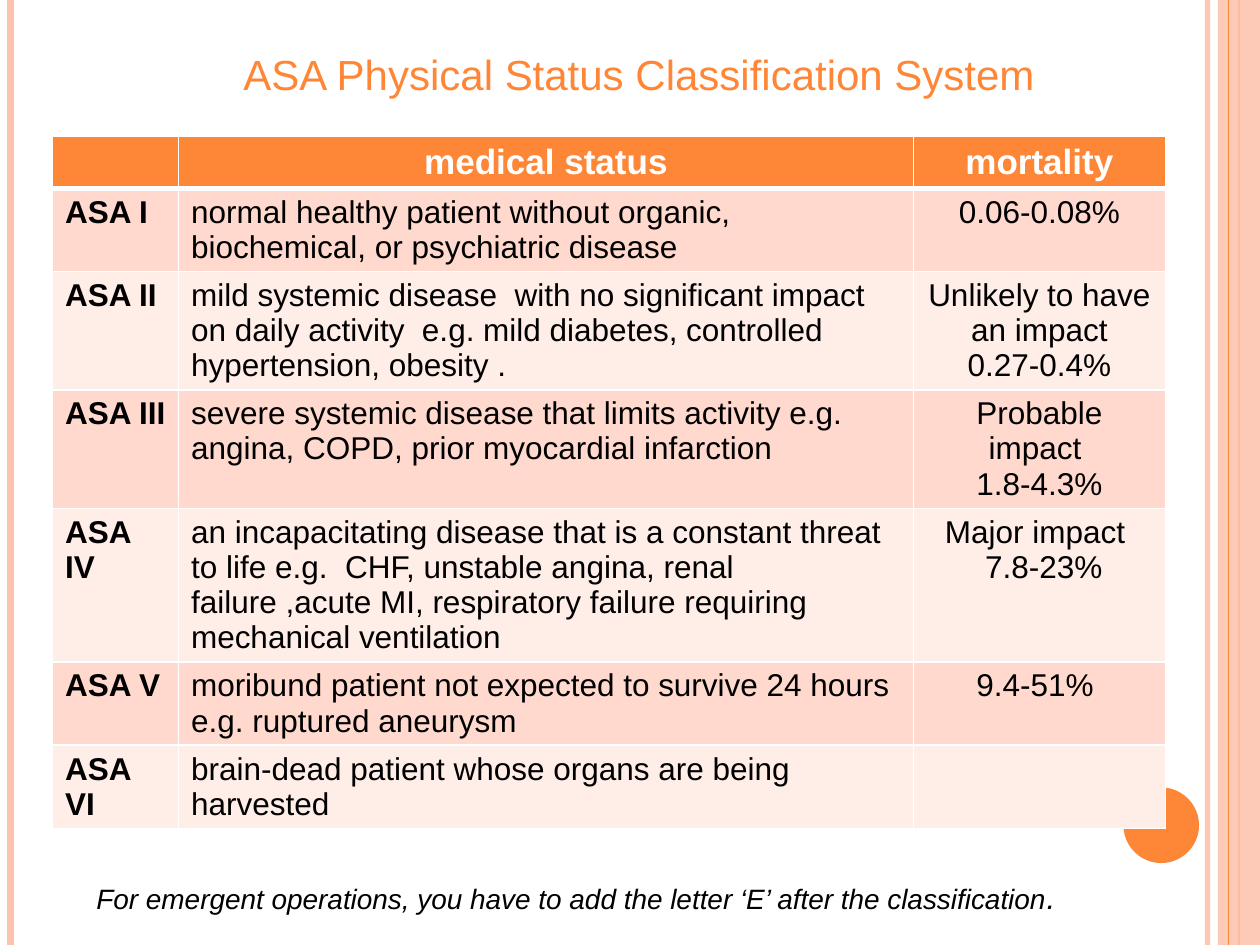
"""Build the slide on the ASA physical status classes."""
from typing import NamedTuple

from lxml.etree import SubElement as Sub
from pptx import Presentation
from pptx.dml.color import RGBColor
from pptx.enum.shapes import MSO_CONNECTOR as Link, MSO_SHAPE as Form
from pptx.enum.text import MSO_AUTO_SIZE as Fit, PP_ALIGN as Align
from pptx.oxml import parse_xml
from pptx.oxml.ns import nsdecls, qn
from pptx.util import Pt

WIDE, HIGH = 720, 540
ORANGE, PEACH, WHITE, BLACK = "FE8637", "FEC3AE", "FFFFFF", "000000"
BANDS = "FFD9CE", "FFEDE8"
COLS = 72, 420, 144
HEAD = "", "medical status", "mortality"


class Stripe(NamedTuple):
    x: float
    width: float
    color: str
    alpha: int = 100


class Grade(NamedTuple):
    name: str
    status: str
    risk: str
    height: float


class Box(NamedTuple):
    left: float
    top: float
    width: float
    height: float


STRIPES = [
    Stripe(690, 3, PEACH, 93),
    Stripe(6, 4.5, PEACH),
    Stripe(708, 1.5, ORANGE),
]
EDGE = Stripe(702, 0.75, ORANGE)
GRADES = [
    Grade("ASA I", "normal healthy patient without organic, biochemical, "
          "or psychiatric disease", "0.06-0.08%", 47.4),
    Grade("ASA II", "mild systemic disease  with no significant impact on daily "
          "activity  e.g. mild diabetes, controlled hypertension, obesity .",
          "Unlikely to have an impact\n0.27-0.4%", 67.6),
    Grade("ASA III", "severe systemic disease that limits activity e.g. angina, "
          "COPD, prior myocardial infarction",
          "Probable impact \n 1.8-4.3% ", 67.6),
    Grade("ASA IV", "an incapacitating disease that is a constant threat to life "
          "e.g.  CHF, unstable angina, renal failure ,acute MI, respiratory "
          "failure requiring mechanical ventilation",
          "Major impact \n 7.8-23%", 87.7),
    Grade("ASA V", "moribund patient not expected to survive 24 hours "
          "e.g. ruptured aneurysm", "9.4-51% ", 47.4),
    Grade("ASA VI", "brain-dead patient whose organs are being harvested",
          "", 47.4),
]


def paint(fill, color: str) -> None:
    fill.solid()
    fill.fore_color.rgb = RGBColor.from_string(color)


def fade(shape, alpha: int) -> None:
    if alpha < 100:
        tint = shape._element.spPr.find(".//" + qn("a:srgbClr"))
        Sub(tint, qn("a:alpha"), val=str(alpha * 1000))


def write(para, text: str, *, size: float = 18, color: str = BLACK,
          bold: bool = False, slant: bool = False, align=Align.LEFT) -> None:
    para.alignment = align
    run = para.add_run()
    run.text = text
    font = run.font
    font.name, font.size = "Arial", Pt(size)
    font.bold, font.italic = bold, slant
    paint(font.fill, color)


def draw_stripe(slide, stripe: Stripe) -> None:
    x = Pt(stripe.x)
    line = slide.shapes.add_connector(Link.STRAIGHT, x, 0, x, Pt(HIGH))
    line.line.width = Pt(stripe.width)
    paint(line.line.fill, stripe.color)
    fade(line, stripe.alpha)
    Sub(line._element.spPr, qn("a:effectLst"))


def draw_shape(slide, form, box: Box, color: str, alpha: int = 100) -> None:
    shape = slide.shapes.add_shape(form, *map(Pt, box))
    shape.shadow.inherit = False
    paint(shape.fill, color)
    fade(shape, alpha)
    shape.line.fill.background()


def add_box(slide, box: Box, wrap: bool):
    frame = slide.shapes.add_textbox(*map(Pt, box)).text_frame
    frame.word_wrap = wrap
    frame.auto_size = Fit.SHAPE_TO_FIT_TEXT
    return frame.paragraphs[0]


def rule(cell, top: float, base: float) -> None:
    props = cell._tc.get_or_add_tcPr()
    sides = ("L", 1), ("R", 1), ("T", top), ("B", base)
    for spot, (side, width) in enumerate(sides):
        props.insert(spot, parse_xml(
            f'<a:ln{side} {nsdecls("a")} w="{Pt(width)}"><a:solidFill>'
            f'<a:srgbClr val="{WHITE}"/></a:solidFill></a:ln{side}>'))


def fill_cell(cell, text: str, back: str, **style) -> None:
    paint(cell.fill, back)
    frame = cell.text_frame
    for spot, part in enumerate(text.split("\n") if text else []):
        para = frame.add_paragraph() if spot else frame.paragraphs[0]
        write(para, part, **style)


def draw_table(slide) -> None:
    heights = [29.5] + [grade.height for grade in GRADES]
    box = Box(30, 78, sum(COLS), sum(heights))
    table = slide.shapes.add_table(
        len(heights), len(COLS), *map(Pt, box)).table
    for col, width in zip(table.columns, COLS):
        col.width = Pt(width)
    for row, height in zip(table.rows, heights):
        row.height = Pt(height)
    for c, text in enumerate(HEAD):
        cell = table.cell(0, c)
        fill_cell(cell, text, ORANGE, size=20, color=WHITE, bold=True,
                  align=Align.CENTER)
        rule(cell, 1, 3)
    for r, grade in enumerate(GRADES, 1):
        for c, text in enumerate(grade[:3]):
            cell = table.cell(r, c)
            fill_cell(cell, text, BANDS[(r - 1) % 2], bold=c == 0,
                      align=Align.CENTER if c == 2 else Align.LEFT)
            rule(cell, 3 if r == 1 else 1, 1)


def main() -> None:
    deck = Presentation()
    deck.slide_width, deck.slide_height = Pt(WIDE), Pt(HIGH)
    slide = deck.slides.add_slide(deck.slide_layouts[6])
    paint(slide.background.fill, WHITE)
    for stripe in STRIPES:
        draw_stripe(slide, stripe)
    draw_shape(slide, Form.RECTANGLE, Box(696, 0, 24, HIGH), PEACH, 87)
    draw_stripe(slide, EDGE)
    draw_shape(slide, Form.OVAL, Box(642, 450, 43.2, 43.2), ORANGE)
    draw_table(slide)
    title = add_box(slide, Box(132, 24, 478, 36), False)
    write(title, "ASA Physical Status Classification System",
          size=24, color="FF8636")
    note = add_box(slide, Box(48, 498, 636, 29), True)
    write(note, "For emergent operations, you have to add the letter ‘E’ "
          "after the classification", size=16, slant=True)
    write(note, ".", slant=True)
    deck.save("out.pptx")


if __name__ == "__main__":
    main()
